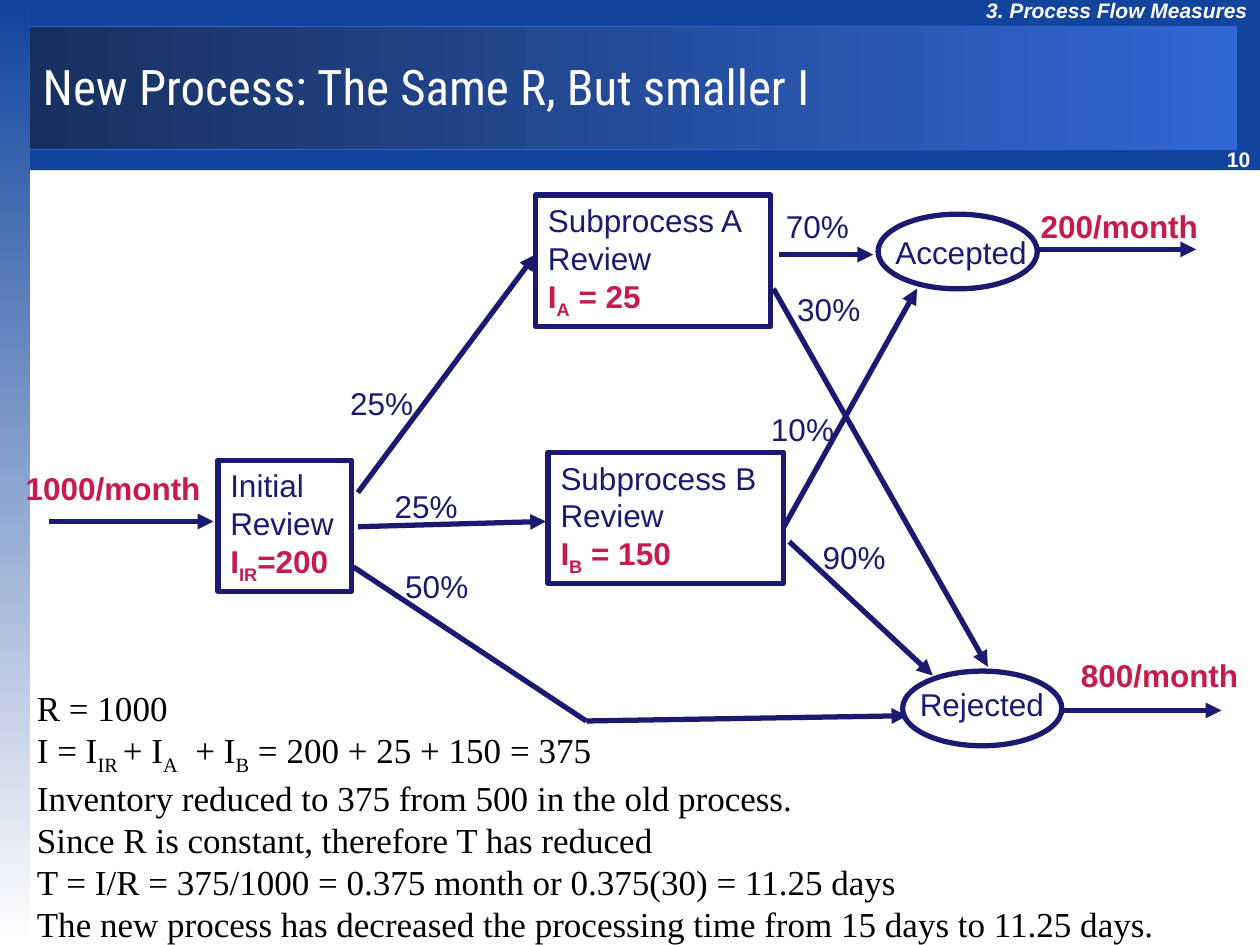
from lxml import etree
from pptx import Presentation
from pptx.dml.color import RGBColor
from pptx.enum.shapes import MSO_CONNECTOR as CONN, MSO_SHAPE as SHAPE
from pptx.enum.text import MSO_ANCHOR as ANCHOR, MSO_AUTO_SIZE as AUTO, PP_ALIGN as ALIGN
from pptx.oxml.ns import qn
from pptx.util import Pt


def rgb(value):
    return RGBColor.from_string(value)


def write(sp, rows, wrap=False):
    tf = sp.text_frame
    frame = {"word_wrap": wrap, "auto_size": AUTO.SHAPE_TO_FIT_TEXT,
             "vertical_anchor": ANCHOR.TOP}
    for key, value in frame.items():
        setattr(tf, key, value)
    for i, (text, color, fmt) in enumerate(rows):
        p = tf.add_paragraph() if i else tf.paragraphs[0]
        p.alignment = ALIGN.LEFT
        for j, part in enumerate(text.split("|")):
            r = p.add_run()
            r.text = part
            r.font.color.rgb = rgb(color)
            for key, value in fmt.items():
                setattr(r.font, key, value)
            if j % 2:
                r.font._element.set("baseline", "-25000")


NAVY, RED, WHITE, BLUE = "1A1A70", "C71B4C", "FFFFFF", "12449E"
LABEL = {"name": "Arial", "size": Pt(18), "bold": False}
STRONG = {**LABEL, "bold": True}
SMALL = {**STRONG, "size": Pt(12)}
BODY = {"name": "Times New Roman", "size": Pt(20)}

prs = Presentation()
prs.slide_width, prs.slide_height = Pt(720), Pt(540)
s = prs.slides.add_slide(prs.slide_layouts[5])

bands = [
    ((14.4, 0, 705.6, 97.2), (BLUE,), 0, None),
    ((14.4, 15, 692, 70.5), ("18305F", "3167D3"), 0, "3167D3"),
    ((0, 0, 17.2, 540), (BLUE, WHITE), 270, None),
]
for box, colors, angle, edge in bands:
    sp = s.shapes.add_shape(SHAPE.RECTANGLE, *map(Pt, box))
    sp.shadow.inherit = False
    if len(colors) == 1:
        sp.fill.solid()
        sp.fill.fore_color.rgb = rgb(colors[0])
    else:
        sp.fill.gradient()
        sp.fill.gradient_angle = angle
        for stop, color, position in zip(sp.fill.gradient_stops, colors, (0, 1)):
            stop.color.rgb = rgb(color)
            stop.position = position
    if edge:
        sp.line.color.rgb = rgb(edge)
        sp.line.width = Pt(0.75)
    else:
        sp.line.fill.background()

title = s.shapes.title
place = {"left": Pt(17.2), "top": Pt(15), "width": Pt(702.8), "height": Pt(68)}
for key, value in place.items():
    setattr(title, key, value)
write(title, [("New Process: The Same R, But smaller I", WHITE,
               {"name": "Roboto Condensed", "size": Pt(28)})], wrap=True)
title.text_frame.auto_size = AUTO.NONE
title.text_frame.vertical_anchor = ANCHOR.MIDDLE
s.shapes._spTree.append(title._element)

header = s.shapes.add_textbox(Pt(556.5), Pt(-5), Pt(163.5), Pt(21.8))
header.text_frame.margin_right = Pt(0)
write(header, [("3. Process Flow Measures", WHITE, {**SMALL, "italic": True})], wrap=True)

boxes = [
    ((124.5, 263, 76.5, 75), "Initial", "I|IR|=200"),
    ((306, 111.5, 134.5, 75), "Subprocess A", "I|A| = 25"),
    ((313.2, 258.5, 134.5, 75), "Subprocess B", "I|B| = 150"),
]
ovals = [(501.8, 122.4), (515.8, 383.5)]
nodes = [(SHAPE.RECTANGLE, box, [(name, NAVY, LABEL), ("Review", NAVY, LABEL),
                                 (stock, RED, STRONG)]) for box, name, stock in boxes]
nodes += [(SHAPE.OVAL, (x, y, 91, 42.7), []) for x, y in ovals]
for kind, box, rows in nodes:
    sp = s.shapes.add_shape(kind, *map(Pt, box))
    sp.shadow.inherit = False
    sp.fill.background()
    sp.line.color.rgb = rgb(NAVY)
    sp.line.width = Pt(3)
    if rows:
        write(sp, rows)

flows = [
    (28, 298, 122, 298), (204.5, 281.5, 306, 145.5), (204.5, 301, 312, 298),
    (202, 324, 335, 412), (335, 412, 518.5, 409), (445, 145.5, 499, 145.5),
    (442, 165, 564.5, 381), (448, 301, 524, 165), (451, 309.5, 533, 386),
    (592.5, 142.5, 683.5, 142.5), (607, 406, 698, 406),
]
for flow in flows:
    line = s.shapes.add_connector(CONN.STRAIGHT, *map(Pt, flow))
    line.line.color.rgb = rgb(NAVY)
    line.line.width = Pt(3)
    if flow[2:] != (335, 412):
        etree.SubElement(line.line._get_or_add_ln(), qn("a:tailEnd"), type="triangle")
    etree.SubElement(line._element.spPr, qn("a:effectLst"))

labels = [
    ("10", 694, 80, 29, WHITE, SMALL),
    ("Accepted", 504.5, 129.5, 89.5, NAVY, LABEL),
    ("Rejected", 518.5, 388, 85.5, NAVY, LABEL),
    ("1000/month", 7.5, 264.5, 114.5, RED, STRONG),
    ("200/month", 587.5, 114.5, 104.5, RED, STRONG),
    ("800/month", 610.5, 371.5, 104.5, RED, STRONG),
]
shares = [("25%", 193, 216), ("50%", 224.5, 320.5), ("25%", 218.5, 275), ("70%", 442, 114.5),
          ("30%", 448.5, 162), ("90%", 463, 304), ("10%", 433.5, 230.5)]
labels += [(text, x, y, 50.5, NAVY, LABEL) for text, x, y in shares]
for text, x, y, width, color, fmt in labels:
    height = 21.8 if fmt["size"] == Pt(12) else 29
    write(s.shapes.add_textbox(*map(Pt, (x, y, width, height))), [(text, color, fmt)])

notes = [
    "R = 1000",
    "I = I|IR |+ I|A|  + I|B| = 200 + 25 + 150 = 375",
    "Inventory reduced to 375 from 500 in the old process.",
    "Since R is constant, therefore T has reduced",
    "T = I/R = 375/1000 = 0.375 month or 0.375(30) = 11.25 days",
    "The new process has decreased the processing time from 15 days to 11.25 days.",
]
sp = s.shapes.add_textbox(Pt(14), Pt(389), Pt(700), Pt(151))
write(sp, [(text, "000000", BODY) for text in notes], wrap=True)

prs.save("out.pptx")
